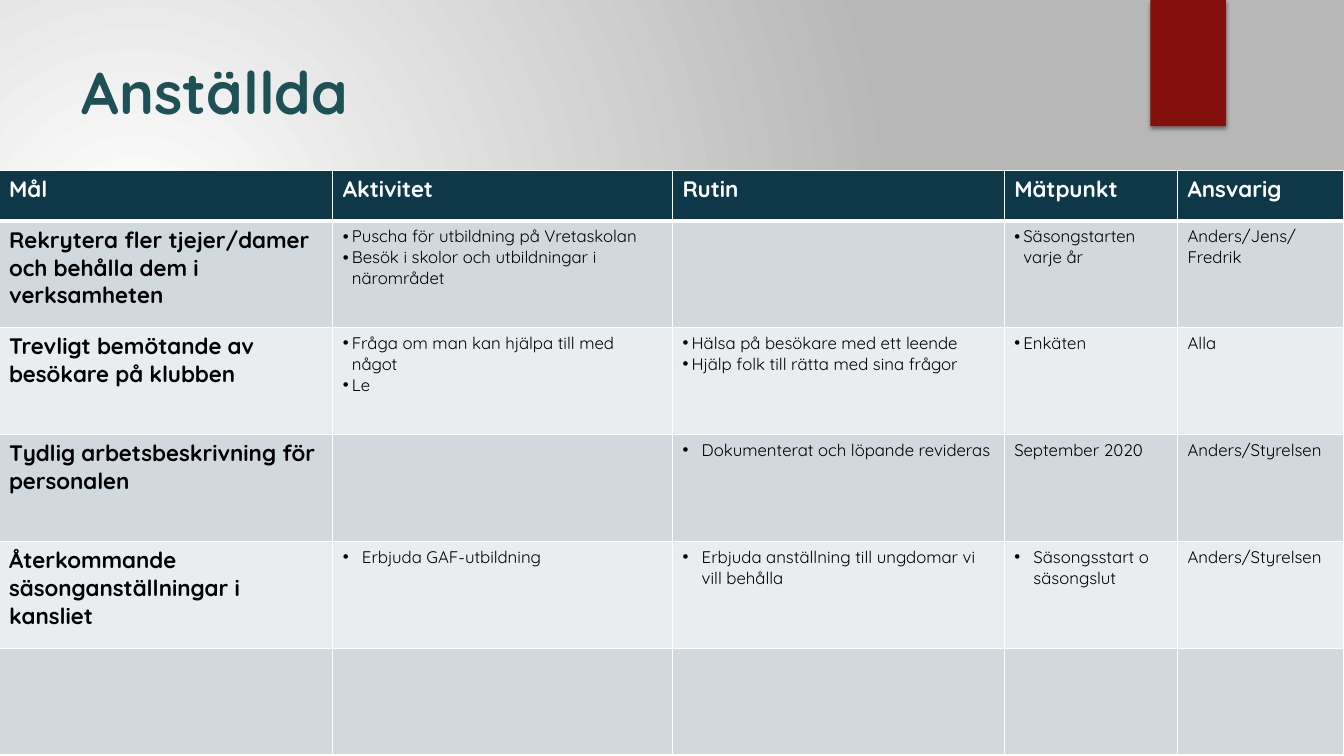
import pptx
import pptx.util
import pptx.oxml
import pptx.oxml.ns
import pptx.dml.color
import pptx.enum.shapes
import pptx.enum.text
from pptx.util import Inches, Pt

# Content: a list in a cell is bulleted, with a narrow or wide hanging indent
TITLE = "Anställda"
HEADINGS = ["Mål", "Aktivitet", "Rutin", "Mätpunkt", "Ansvarig"]
NARROW, WIDE = 0.09, 0.19
GOALS = [  # bullet indent, cells
    (NARROW, ["Rekrytera fler tjejer/damer och behålla dem i verksamheten",
              ["Puscha för utbildning på Vretaskolan",
               "Besök i skolor och utbildningar i närområdet"],
              "", ["Säsongstarten varje år"], "Anders/Jens/Fredrik"]),
    (NARROW, ["Trevligt bemötande av besökare på klubben",
              ["Fråga om man kan hjälpa till med något", "Le"],
              ["Hälsa på besökare med ett leende",
               "Hjälp folk till rätta med sina frågor"],
              ["Enkäten"], "Alla"]),
    (WIDE, ["Tydlig arbetsbeskrivning för personalen", "",
            ["Dokumenterat och löpande revideras"],
            "September 2020", "Anders/Styrelsen"]),
    (WIDE, ["Återkommande säsonganställningar i kansliet",
            ["Erbjuda GAF-utbildning"],
            ["Erbjuda anställning till ungdomar vi vill behålla"],
            ["Säsongsstart o säsongslut"], "Anders/Styrelsen"]),
    (WIDE, [""] * len(HEADINGS)),
]
COLUMN_WIDTHS = [3.31, 3.37, 3.29, 1.72, 1.65]
HEADER_HEIGHT, GOAL_HEIGHT = 0.5, 1.06

THEME = {
    "font": "Quicksand",
    "title": "1E5155", "ribbon": "84100E", "header": "0E3847",
    "bands": ["D1D9DE", "E9EDEF"],
    "white": "FFFFFF", "black": "000000", "backdrop": "B7B7B7",
    "title_size": 42, "heading_size": 16, "body_size": 12,
}
NAMESPACE = pptx.oxml.ns.nsdecls("a")


def color(name):
    return pptx.dml.color.RGBColor.from_string(name)


def style(paragraph, size, shade, bold):
    font = paragraph.font
    font.name, font.size, font.bold = THEME["font"], Pt(size), bold
    font.color.rgb = color(shade)


def add_bullet(paragraph, indent):
    properties = paragraph._p.get_or_add_pPr()
    properties.set("marL", str(Inches(indent)))
    properties.set("indent", str(-Inches(indent)))
    properties.append(pptx.oxml.parse_xml(f'<a:buFont {NAMESPACE} typeface="Arial"/>'))
    properties.append(pptx.oxml.parse_xml(f'<a:buChar {NAMESPACE} char="•"/>'))


def add_borders(cell, top, bottom):
    properties = cell._tc.get_or_add_tcPr()
    sides = [("lnL", 1), ("lnR", 1), ("lnT", top), ("lnB", bottom)]
    for place, (side, width) in enumerate(sides):
        properties.insert(place, pptx.oxml.parse_xml(
            f'<a:{side} {NAMESPACE} w="{Pt(width)}"><a:solidFill>'
            f'<a:srgbClr val="{THEME["white"]}"/></a:solidFill></a:{side}>'))


def fill_cell(cell, content, indent, size, shade, bold):
    bulleted = isinstance(content, list)
    lines = content if bulleted else [content]
    frame = cell.text_frame
    for number, line in enumerate(lines):
        paragraph = frame.add_paragraph() if number else frame.paragraphs[0]
        if line:
            paragraph.text = line
        if bulleted:
            add_bullet(paragraph, indent)
        style(paragraph, size, shade, bold)


def set_background(page):
    fill = page.background.fill
    fill.gradient()
    for stop, shade in zip(fill.gradient_stops, (THEME["white"], THEME["backdrop"])):
        stop.color.rgb = color(shade)
    fill.gradient_stops[0].position, fill.gradient_stops[1].position = 0, 1
    gradient = page.background._cSld.find(".//" + pptx.oxml.ns.qn("a:gradFill"))
    linear = gradient.find(pptx.oxml.ns.qn("a:lin"))
    gradient.replace(linear, pptx.oxml.parse_xml(
        f'<a:path {NAMESPACE} path="circle">'
        '<a:fillToRect l="45000" t="65000" r="125000" b="100000"/></a:path>'))


def add_ribbon(page):
    ribbon = page.shapes.add_shape(pptx.enum.shapes.MSO_SHAPE.RECTANGLE,
                                   Inches(11.41), 0, Inches(0.75), Inches(1.25))
    ribbon.fill.solid()
    ribbon.fill.fore_color.rgb = color(THEME["ribbon"])
    ribbon.line.fill.background()
    ribbon.shadow.inherit = False
    effects = ribbon._element.spPr.find(pptx.oxml.ns.qn("a:effectLst"))
    effects.append(pptx.oxml.parse_xml(
        f'<a:outerShdw {NAMESPACE} blurRad="{Pt(3)}" dist="{Pt(2)}" dir="5400000" '
        f'rotWithShape="0"><a:srgbClr val="{THEME["black"]}">'
        '<a:alpha val="45000"/></a:srgbClr></a:outerShdw>'))


def add_title(page):
    title = page.shapes.title
    title.left, title.top = Inches(0.71), Inches(0.5)
    title.width, title.height = Inches(10.29), Inches(1.53)
    frame = title.text_frame
    frame.text = TITLE
    frame.vertical_anchor = pptx.enum.text.MSO_ANCHOR.TOP
    paragraph = frame.paragraphs[0]
    paragraph.alignment = pptx.enum.text.PP_ALIGN.LEFT
    style(paragraph, THEME["title_size"], THEME["title"], True)


def add_goal_table(page):
    rows = [(0, HEADINGS)] + GOALS
    height = HEADER_HEIGHT + GOAL_HEIGHT * len(GOALS)
    table = page.shapes.add_table(
        len(rows), len(HEADINGS), Inches(-0.01), Inches(1.69),
        Inches(sum(COLUMN_WIDTHS)), Inches(height)).table
    for column, width in zip(table.columns, COLUMN_WIDTHS):
        column.width = Inches(width)
    for r, (indent, contents) in enumerate(rows):
        is_header = r == 0
        table.rows[r].height = Inches(HEADER_HEIGHT if is_header else GOAL_HEIGHT)
        band = THEME["header"] if is_header else THEME["bands"][(r - 1) % 2]
        shade = THEME["white"] if is_header else THEME["black"]
        for c, content in enumerate(contents):
            cell = table.cell(r, c)
            cell.fill.solid()
            cell.fill.fore_color.rgb = color(band)
            add_borders(cell, 3 if r == 1 else 1, 3 if is_header else 1)
            strong = is_header or c == 0
            size = THEME["heading_size"] if strong else THEME["body_size"]
            fill_cell(cell, content, indent, size, shade, strong)


def main():
    deck = pptx.Presentation()
    deck.slide_width, deck.slide_height = Inches(13.33), Inches(7.5)
    page = deck.slides.add_slide(deck.slide_layouts[5])
    set_background(page)
    add_ribbon(page)
    add_title(page)
    add_goal_table(page)
    deck.save("out.pptx")


if __name__ == "__main__":
    main()
